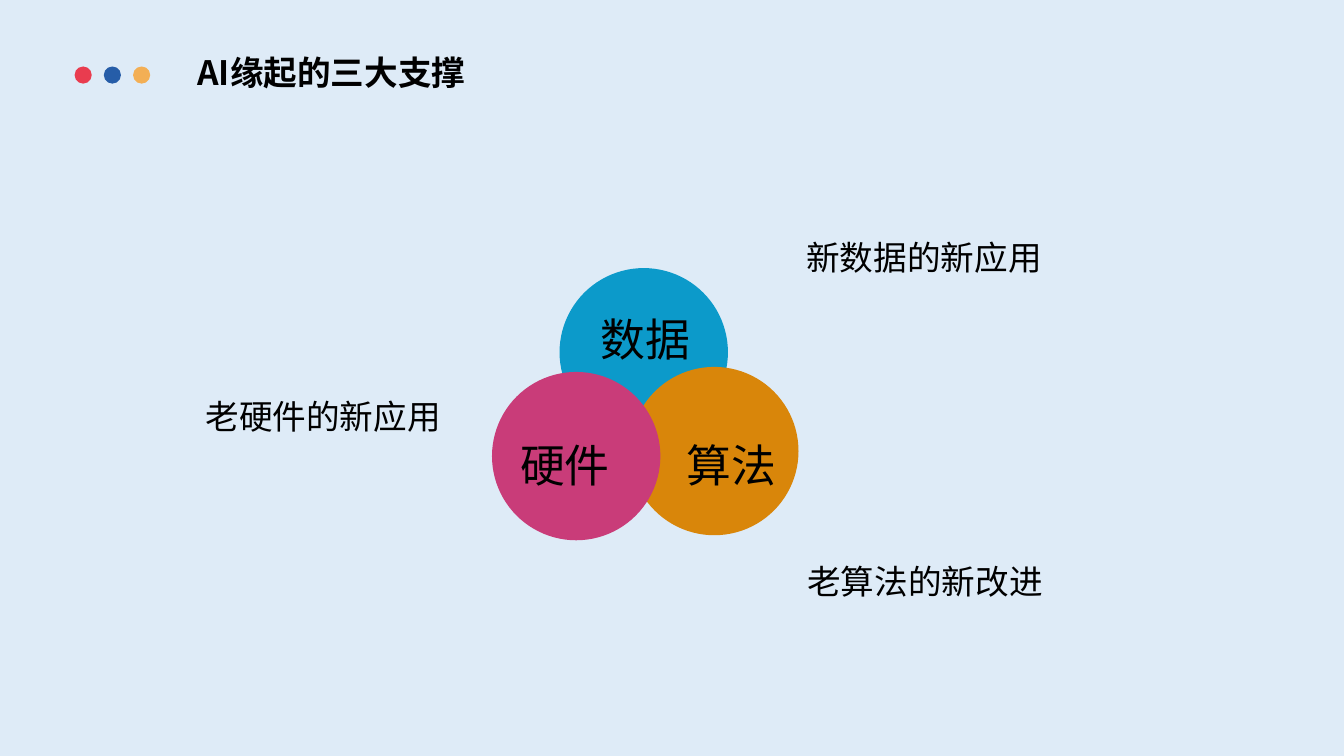
from lxml import etree
from pptx import Presentation
from pptx import util as u
from pptx.dml.color import RGBColor
from pptx.enum import shapes, text
from pptx.oxml import ns

FONT = "Noto Sans CJK SC"


def color(value):
    """Turn a hex string into a colour."""
    return RGBColor.from_string(value)


class SlideBuilder:
    """Hold the style and the current slide."""

    def __init__(self, slide, background, ink, font):
        """Keep the style and paint the background."""
        self.slide = slide
        self.ink = ink
        self.font = font
        slide.background.fill.solid()
        slide.background.fill.fore_color.rgb = color(background)

    def circle(self, left, top, diameter, fill):
        """Add a plain filled circle."""
        shape = self.slide.shapes.add_shape(
            shapes.MSO_SHAPE.OVAL, u.Inches(left), u.Inches(top),
            u.Inches(diameter), u.Inches(diameter))
        shape.shadow.inherit = False
        shape.fill.solid()
        shape.fill.fore_color.rgb = color(fill)
        shape.line.fill.background()

    def label(self, words, left, top, width, height, size=24, bold=False,
              wrap=True, anchor=text.MSO_ANCHOR.TOP, spacing=1.0):
        """Add a one-paragraph text box."""
        shape = self.slide.shapes.add_textbox(
            u.Inches(left), u.Inches(top), u.Inches(width), u.Inches(height))
        frame = shape.text_frame
        frame.text = words
        frame.word_wrap = wrap
        frame.vertical_anchor = anchor
        paragraph = frame.paragraphs[0]
        paragraph.line_spacing = spacing
        for run in paragraph.runs:
            run.font.size = u.Pt(size)
            run.font.bold = bold
            run.font.name = self.font
            run.font.color.rgb = color(self.ink)
            east_asian = etree.SubElement(run.font._element, ns.qn("a:ea"))
            east_asian.set("typeface", self.font)


def main():
    """Build and save the slide."""
    presentation = Presentation()
    presentation.slide_width = u.Inches(13.33)
    presentation.slide_height = u.Inches(7.5)
    slide = presentation.slides.add_slide(presentation.slide_layouts[6])
    builder = SlideBuilder(slide, "DEEBF7", "000000", FONT)

    builder.label("AI缘起的三大支撑", 1.86, 0.27, 9, 0.94, bold=True,
                  anchor=text.MSO_ANCHOR.MIDDLE, spacing=0.9)
    for index, fill in enumerate(("E93C4F", "265DA8", "F3AF55")):
        builder.circle(0.74 + 0.29 * index, 0.66, 0.17, fill)

    for left, top, fill in ((5.55, 2.66, "0C9ACA"),
                            (6.25, 3.64, "D9860A"),
                            (4.88, 3.69, "C93C79")):
        builder.circle(left, top, 1.67, fill)

    for words, left, top, width in (("新数据的新应用", 7.9, 2.3, 2.73),
                                    ("老硬件的新应用", 1.94, 3.88, 3.01),
                                    ("老算法的新改进", 7.91, 5.52, 2.7)):
        builder.label(words, left, top, width, 0.5)

    for words, left, top in (("数据", 5.86, 3.04),
                             ("硬件", 5.06, 4.29),
                             ("算法", 6.71, 4.29)):
        builder.label(words, left, top, 1.1, 0.64, size=32, wrap=False)

    presentation.save("out.pptx")


if __name__ == "__main__":
    main()
